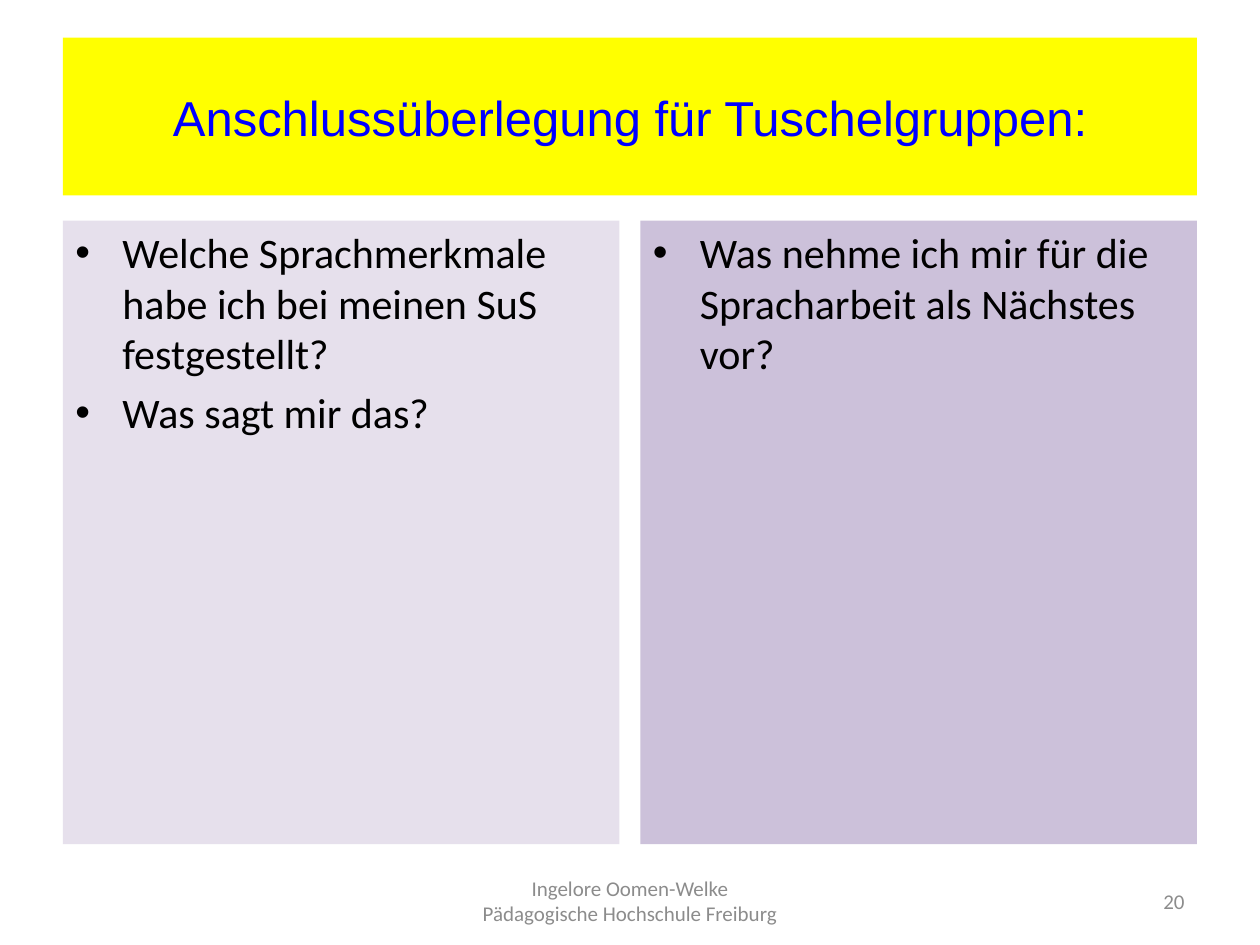
from dataclasses import dataclass

from pptx import Presentation
from pptx.dml.color import RGBColor
from pptx.enum.shapes import MSO_SHAPE
from pptx.enum.text import MSO_ANCHOR, PP_ALIGN
from pptx.oxml import parse_xml
from pptx.oxml.ns import nsdecls
from pptx.slide import Slide
from pptx.util import Cm, Pt

RECT = MSO_SHAPE.RECTANGLE
TOP, MID = MSO_ANCHOR.TOP, MSO_ANCHOR.MIDDLE
LEFT, CENTER, RIGHT = PP_ALIGN.LEFT, PP_ALIGN.CENTER, PP_ALIGN.RIGHT
COLORS = {
    "title": "FFFF00",
    "blue": "0000FF",
    "pale": "E6E0EC",
    "lilac": "CCC1DA",
    "black": "000000",
    "gray": "8C8C8C",
}
WIDE, HIGH = 25.4, 19.05
EDGE, GAP = 1.27, 0.42
FULL = WIDE - 2 * EDGE
HALF = (FULL - GAP) / 2
FOOT, LINE = 17.65, 1.02


@dataclass
class Deck:
    """Holds the style and the current slide, and draws its elements."""

    slide: Slide
    font: str = "Calibri"
    head: str = "Arial"

    def add_text(self, para, text, size, color, font=None):
        run = para.add_run()
        run.text = text
        run.font.size = Pt(size)
        run.font.name = font or self.font
        run.font.color.rgb = RGBColor.from_string(COLORS[color])

    def panel(self, box, fill, anchor):
        shape = self.slide.shapes.add_shape(RECT, *map(Cm, box))
        shape.shadow.inherit = False
        shape.fill.solid()
        shape.fill.fore_color.rgb = RGBColor.from_string(COLORS[fill])
        shape.line.fill.background()
        frame = shape.text_frame
        frame.word_wrap = True
        frame.vertical_anchor = anchor
        return frame

    def title(self, box, text):
        para = self.panel(box, "title", MID).paragraphs[0]
        para.alignment = CENTER
        self.add_text(para, text, 28, "blue", self.head)

    def bullets(self, box, fill, items):
        frame = self.panel(box, fill, TOP)
        for num, item in enumerate(items):
            para = frame.add_paragraph() if num else frame.paragraphs[0]
            para.alignment = LEFT
            para.space_before = Pt(4.8)
            props = para._p.get_or_add_pPr()
            props.set("marL", str(Cm(0.95)))
            props.set("indent", str(Cm(-0.95)))
            for tag in ('buFont %s typeface="Arial"', 'buChar %s char="•"'):
                props.append(parse_xml(f"<a:{tag % nsdecls('a')}/>"))
            self.add_text(para, item, 24, "black")

    def footer(self, box, lines, align, shift=0):
        frame = self.slide.shapes.add_textbox(*map(Cm, box)).text_frame
        frame.word_wrap = True
        frame.vertical_anchor = MID
        para = frame.paragraphs[0]
        para.alignment = align
        if shift:
            para._p.get_or_add_pPr().set("indent", str(Cm(shift)))
        for num, line in enumerate(lines):
            if num:
                para.add_line_break()
            self.add_text(para, line, 12, "gray")


def main():
    prs = Presentation()
    prs.slide_width, prs.slide_height = Cm(WIDE), Cm(HIGH)
    deck = Deck(prs.slides.add_slide(prs.slide_layouts[6]))
    deck.title((EDGE, 0.76, FULL, 3.18), "Anschlussüberlegung für Tuschelgruppen:")
    columns = [
        ("pale", ["Welche Sprachmerkmale habe ich bei meinen SuS festgestellt?",
                  "Was sagt mir das?"]),
        ("lilac", ["Was nehme ich mir für die Spracharbeit als Nächstes vor?"]),
    ]
    for num, (fill, items) in enumerate(columns):
        left = EDGE + num * (HALF + GAP)
        deck.bullets((left, 4.45, HALF, 12.57), fill, items)
    deck.footer((8.68, FOOT, 8.04, LINE),
                ["Ingelore Oomen-Welke", "Pädagogische Hochschule Freiburg"],
                CENTER, -1.27)
    deck.footer((18.2, FOOT, 5.93, LINE), ["20"], RIGHT)
    prs.save("out.pptx")


if __name__ == "__main__":
    main()
